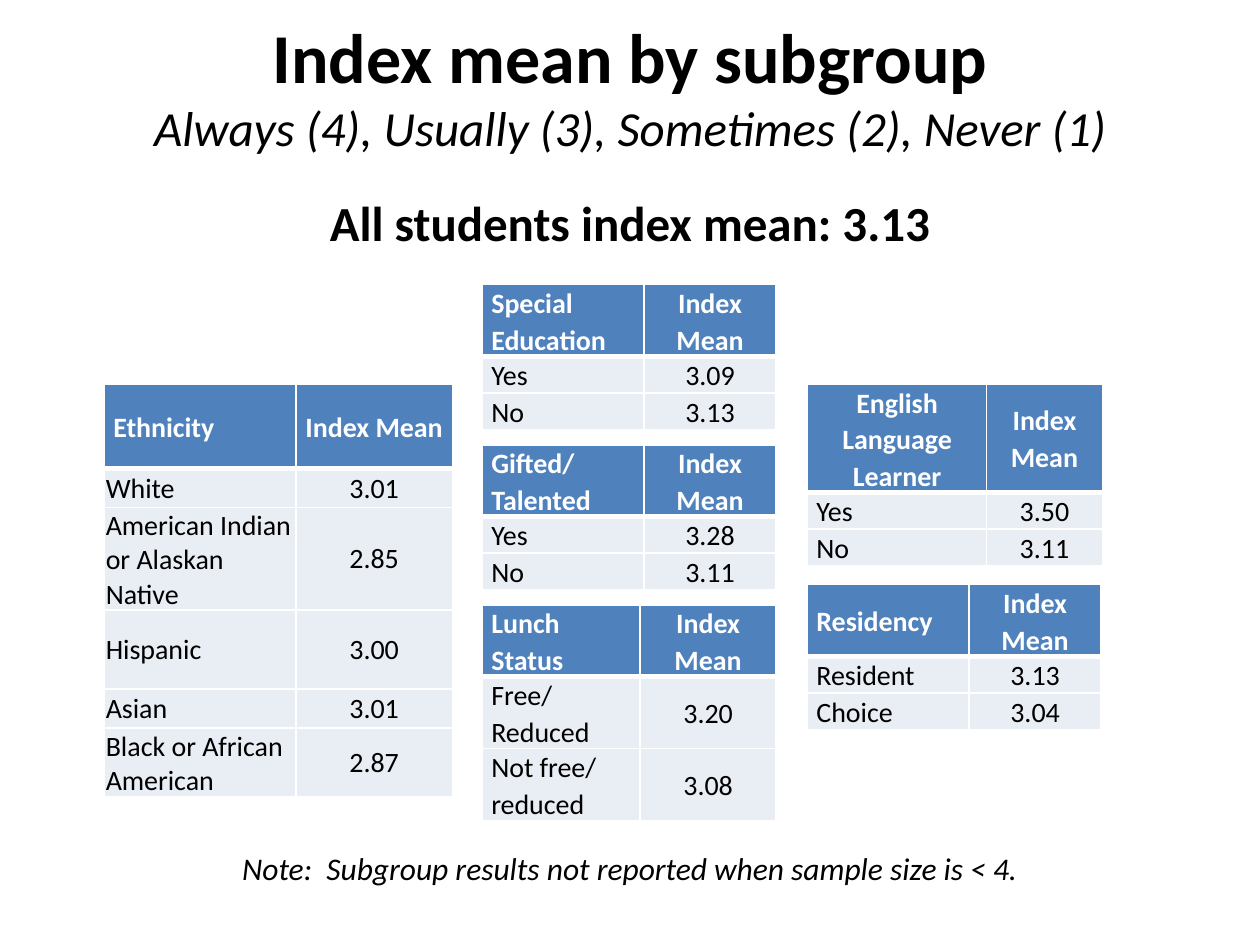
from lxml import etree
from pptx import Presentation
from pptx.dml.color import RGBColor
from pptx.enum.text import MSO_ANCHOR, MSO_AUTO_SIZE, PP_ALIGN
from pptx.oxml.ns import qn
from pptx.util import Inches, Pt

LEFT, CENTER = PP_ALIGN.LEFT, PP_ALIGN.CENTER
MIDDLE = MSO_ANCHOR.MIDDLE
COLORS = {"text": "000000", "header": "4F81BD", "body": "E9EDF4", "white": "FFFFFF"}
FONT = "Calibri"


def write(para, text, size, color="text", bold=False, italic=False, align=CENTER):
    para.text = text
    para.alignment = align
    para.font.name = FONT
    para.font.size = Pt(size)
    para.font.bold = bold
    para.font.italic = italic
    para.font.color.rgb = RGBColor.from_string(COLORS[color])


def add_border(cell, side, width):
    line = etree.SubElement(cell._tc.get_or_add_tcPr(), qn(f"a:ln{side}"), w=str(Pt(width)))
    fill = etree.SubElement(line, qn("a:solidFill"))
    etree.SubElement(fill, qn("a:srgbClr"), val=COLORS["white"])


deck = Presentation()
deck.slide_width, deck.slide_height = Inches(10), Inches(7.5)
page = deck.slides.add_slide(deck.slide_layouts[5])

title = page.shapes.title
title.left, title.top = Inches(0), Inches(0.16)
title.width, title.height = Inches(10), Inches(1.78)
title_frame = title.text_frame
title_frame.auto_size = MSO_AUTO_SIZE.NONE
title_frame.vertical_anchor = MIDDLE
write(title_frame.paragraphs[0], "Index mean by subgroup", 40, bold=True)
write(title_frame.add_paragraph(), "Always (4), Usually (3), Sometimes (2), Never (1)", 28, italic=True)
overall = title_frame.add_paragraph()
write(overall, "All students index mean: 3.13", 28, bold=True)
overall.space_before = Pt(21)

note = page.shapes.add_textbox(Inches(0), Inches(6.67), Inches(10), Inches(0.43))
note.text_frame.word_wrap = True
note_para = note.text_frame.paragraphs[0]
write(note_para, "Note:  Subgroup results not reported when sample size is < 4.", 18, italic=True)
note_para.line_spacing = 1.07
note_para.space_after = Pt(8)

SHORT_ROWS = [0.57, 0.29, 0.29]
subgroups = [
    ("Ethnicity", 0.83, 3.05, [1.52, 1.24], [0.67, 0.31, 0.81, 0.63, 0.31, 0.54],
     [("White", "3.01"), ("American Indian or Alaskan Native", "2.85"), ("Hispanic", "3.00"),
      ("Asian", "3.01"), ("Black or African American", "2.87")]),
    ("Special Education", 3.83, 2.26, [1.28, 1.05], SHORT_ROWS, [("Yes", "3.09"), ("No", "3.13")]),
    ("Gifted/ Talented", 3.83, 3.53, [1.28, 1.05], SHORT_ROWS, [("Yes", "3.28"), ("No", "3.11")]),
    ("English Language Learner", 6.41, 3.05, [1.42, 0.92], [0.86, 0.29, 0.29],
     [("Yes", "3.50"), ("No", "3.11")]),
    ("Residency", 6.41, 4.64, [1.28, 1.05], SHORT_ROWS, [("Resident", "3.13"), ("Choice", "3.04")]),
    ("Lunch Status", 3.83, 4.8, [1.25, 1.08], [0.57, 0.57, 0.57],
     [("Free/ Reduced", "3.20"), ("Not free/ reduced", "3.08")]),
]

for name, left, top, widths, heights, means in subgroups:
    frame = page.shapes.add_table(len(heights), len(widths), Inches(left), Inches(top),
                                  Inches(sum(widths)), Inches(sum(heights)))
    table = frame.table
    table.horz_banding = False
    for column, width in zip(table.columns, widths):
        column.width = Inches(width)
    for row, height in zip(table.rows, heights):
        row.height = Inches(height)

    for row_index, values in enumerate([(name, "Index Mean"), *means]):
        header = row_index == 0
        tight = name == "Ethnicity" and not header
        for column_index, value in enumerate(values):
            cell = table.cell(row_index, column_index)
            for side in ("L", "R", "T", "B") if header else ("L", "R", "B"):
                add_border(cell, side, 3 if header and side == "B" else 1)
            cell.fill.solid()
            cell.fill.fore_color.rgb = RGBColor.from_string(COLORS["header" if header else "body"])
            cell.vertical_anchor = MIDDLE
            cell.margin_left = cell.margin_right = Inches(0.01 if tight else 0.07)
            cell.margin_top = Inches(0.01 if tight else 0)
            cell.margin_bottom = Inches(0)
            centered = column_index == 1 or value == "English Language Learner"
            para = cell.text_frame.paragraphs[0]
            write(para, value, 16, "white" if header else "text", bold=header,
                  align=CENTER if centered else LEFT)
            para.line_spacing = 1.0 if tight else 1.07

deck.save("out.pptx")
